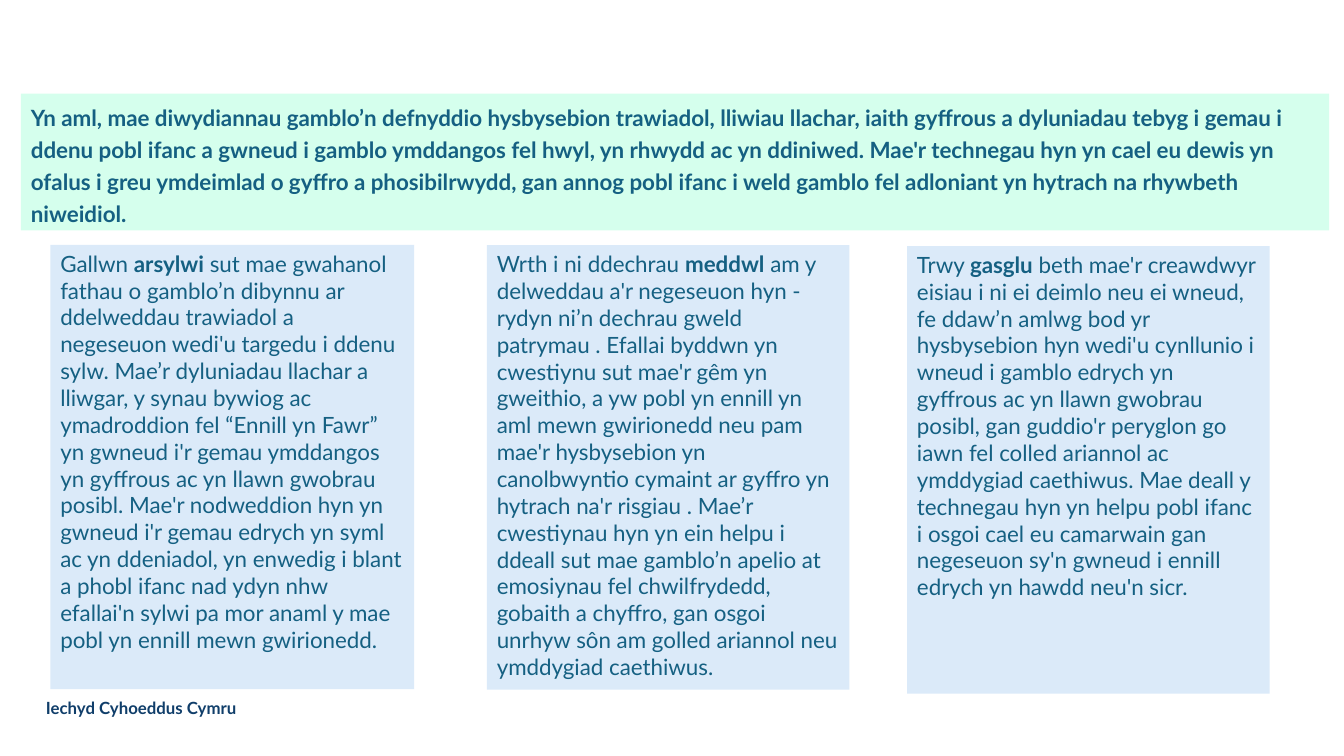
"""Build the slide on how gambling advertising appeals to young people."""
from dataclasses import dataclass

from pptx import Presentation
from pptx.dml.color import RGBColor
from pptx.enum.shapes import MSO_SHAPE as Preset
from pptx.enum.text import MSO_ANCHOR as Anchor, PP_ALIGN as Align
from pptx.slide import Slide
from pptx.util import Cm, Pt

FONT = "Lato"
COLOURS = {
    "mint": "D5FFED",
    "pale blue": "DBEAF9",
    "white": "FFFFFF",
    "teal": "156082",
    "navy": "103E6A",
}


@dataclass(frozen=True)
class Span:
    text: str
    bold: bool = False


@dataclass(frozen=True)
class Panel:
    left: float
    top: float
    width: float
    height: float
    spans: tuple[Span, ...]
    fill: str = "pale blue"
    ink: str = "teal"
    size: int = 16
    line_spacing: float = 1.0


BANNER = Panel(
    0.53, 2.36, 32.97, 3.45,
    (Span(
        "Yn aml, mae diwydiannau gamblo’n defnyddio hysbysebion trawiadol, lliwiau llachar, "
        "iaith gyffrous a dyluniadau tebyg i gemau i ddenu pobl ifanc a gwneud i gamblo "
        "ymddangos fel hwyl, yn rhwydd ac yn ddiniwed. Mae'r technegau hyn yn cael eu dewis "
        "yn ofalus i greu ymdeimlad o gyffro a phosibilrwydd, gan annog pobl ifanc i weld "
        "gamblo fel adloniant yn hytrach na rhywbeth niweidiol.", True),),
    fill="mint", line_spacing=1.2,
)
OBSERVE = Panel(
    1.27, 6.17, 9.17, 11.2,
    (Span("Gallwn "), Span("arsylwi", True), Span(
        " sut mae gwahanol fathau o gamblo’n dibynnu ar ddelweddau trawiadol a negeseuon "
        "wedi'u targedu i ddenu sylw. Mae’r dyluniadau llachar a lliwgar, y synau bywiog ac "
        "ymadroddion fel “Ennill yn Fawr” yn gwneud i'r gemau ymddangos yn gyffrous ac yn "
        "llawn gwobrau posibl. Mae'r nodweddion hyn yn gwneud i'r gemau edrych yn syml ac yn "
        "ddeniadol, yn enwedig i blant a phobl ifanc nad ydyn nhw efallai'n sylwi pa mor "
        "anaml y mae pobl yn ennill mewn gwirionedd.")),
)
THINK = Panel(
    12.27, 6.18, 9.14, 11.2,
    (Span("Wrth i ni ddechrau "), Span("meddwl", True), Span(
        " am y delweddau a'r negeseuon hyn - rydyn ni’n dechrau gweld patrymau . Efallai "
        "byddwn yn cwestiynu sut mae'r gêm yn gweithio, a yw pobl yn ennill yn aml mewn "
        "gwirionedd neu pam mae'r hysbysebion yn canolbwyntio cymaint ar gyffro yn hytrach "
        "na'r risgiau . Mae’r cwestiynau hyn yn ein helpu i ddeall sut mae gamblo’n apelio at "
        "emosiynau fel chwilfrydedd, gobaith a chyffro, gan osgoi unrhyw sôn am golled "
        "ariannol neu ymddygiad caethiwus.")),
)
GATHER = Panel(
    22.86, 6.2, 9.14, 11.28,
    (Span("Trwy "), Span("gasglu", True), Span(
        " beth mae'r creawdwyr eisiau i ni ei deimlo neu ei wneud, fe ddaw’n amlwg bod yr "
        "hysbysebion hyn wedi'u cynllunio i wneud i gamblo edrych yn gyffrous ac yn llawn "
        "gwobrau posibl, gan guddio'r peryglon go iawn fel colled ariannol ac ymddygiad "
        "caethiwus. Mae deall y technegau hyn yn helpu pobl ifanc i osgoi cael eu camarwain "
        "gan negeseuon sy'n gwneud i ennill edrych yn hawdd neu'n sicr.")),
)
FOOTER = Panel(
    0.91, 17.45, 5.64, 0.76,
    (Span("Iechyd Cyhoeddus Cymru", True),),
    fill="white", ink="navy", size=12,
)


def colour(name: str) -> RGBColor:
    return RGBColor.from_string(COLOURS[name])


def draw_panel(page: Slide, panel: Panel) -> None:
    box = page.shapes.add_shape(
        Preset.RECTANGLE, Cm(panel.left), Cm(panel.top), Cm(panel.width), Cm(panel.height)
    )
    box.shadow.inherit = False
    box.fill.solid()
    box.fill.fore_color.rgb = colour(panel.fill)
    box.line.fill.background()
    frame = box.text_frame
    frame.word_wrap = True
    frame.vertical_anchor = Anchor.TOP
    para = frame.paragraphs[0]
    para.alignment = Align.LEFT
    para.line_spacing = panel.line_spacing
    for span in panel.spans:
        run = para.add_run()
        run.text = span.text
        run.font.name = FONT
        run.font.size = Pt(panel.size)
        run.font.bold = span.bold
        run.font.color.rgb = colour(panel.ink)


def main() -> None:
    deck = Presentation()
    deck.slide_width, deck.slide_height = Cm(33.87), Cm(19.05)
    page = deck.slides.add_slide(deck.slide_layouts[6])
    for panel in (BANNER, OBSERVE, THINK, GATHER, FOOTER):
        draw_panel(page, panel)
    deck.save("out.pptx")


if __name__ == "__main__":
    main()
